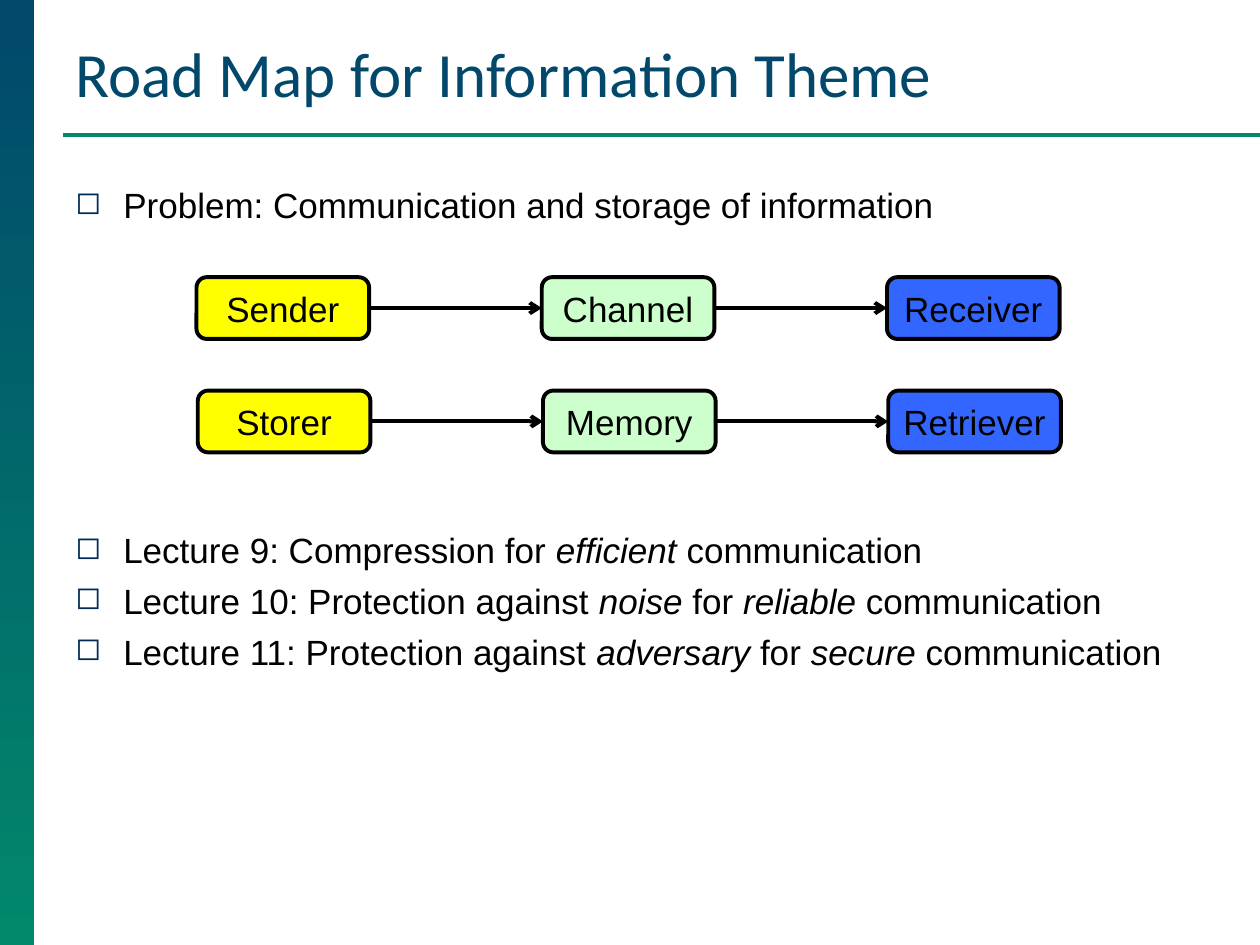
from dataclasses import dataclass

from lxml import etree
from pptx import Presentation
from pptx.dml.color import RGBColor
from pptx.enum.shapes import MSO_CONNECTOR, MSO_SHAPE
from pptx.enum.text import MSO_ANCHOR, PP_ALIGN
from pptx.oxml.ns import qn
from pptx.util import Inches, Pt

STRAIGHT = MSO_CONNECTOR.STRAIGHT
RECTANGLE = MSO_SHAPE.RECTANGLE
ROUNDED = MSO_SHAPE.ROUNDED_RECTANGLE
MIDDLE = MSO_ANCHOR.MIDDLE
BOTTOM = MSO_ANCHOR.BOTTOM
CENTER = PP_ALIGN.CENTER

NAVY, GREEN, BLACK = "01486B", "02886B", "000000"
STAGE_FILLS = ("FFFF00", "CCFFCC", "3366FF")
LEFT_SIDE, RIGHT_SIDE = 1, 3
BOX_WIDTH, BOX_HEIGHT = 1.37, 0.49
BOX_PITCH = 2 * BOX_WIDTH
LINE_WIDTH = 2.25
INDENT = 0.38


@dataclass
class Flow:
    left: float
    top: float
    labels: tuple[str, str, str]


@dataclass
class Bullet:
    runs: tuple[str, ...]
    space_before: float = 5


FLOWS = (
    Flow(1.56, 2.2, ("Sender", "Channel", "Receiver")),
    Flow(1.57, 3.1, ("Storer", "Memory", "Retriever")),
)

# Runs alternate between upright and italic.
BULLETS = (
    Bullet(("Problem: Communication and storage of information",), 0),
    Bullet(("Lecture 9: Compression for ", "efficient", " communication"), 173),
    Bullet(("Lecture 10: Protection against ", "noise", " for ", "reliable", " communication")),
    Bullet(("Lecture 11: Protection against ", "adversary", " for ", "secure", " communication")),
)


def color(value: str) -> RGBColor:
    return RGBColor.from_string(value)


def add_run(paragraph, text: str, size: float = 20, font: str = "Arial",
            fill: str = BLACK, italic: bool = False) -> None:
    run = paragraph.add_run()
    run.text = text
    run.font.size = Pt(size)
    run.font.name = font
    run.font.color.rgb = color(fill)
    run.font.italic = italic


def add_text_frame(slide, left: float, top: float, width: float, height: float):
    box = slide.shapes.add_textbox(Inches(left), Inches(top), Inches(width), Inches(height))
    box.text_frame.word_wrap = True
    return box.text_frame


def add_line(slide, start: tuple[float, float], end: tuple[float, float], fill: str):
    line = slide.shapes.add_connector(STRAIGHT, *map(Inches, start + end))
    line.line.color.rgb = color(fill)
    line.line.width = Pt(LINE_WIDTH)
    etree.SubElement(line._element.spPr, qn("a:effectLst"))
    return line


def add_frame(slide) -> None:
    band = slide.shapes.add_shape(RECTANGLE, 0, 0, Inches(0.27), Inches(7.5))
    band.shadow.inherit = False
    band.line.fill.background()
    band.fill.gradient()
    band.fill.gradient_angle = 270
    for stop, value, position in zip(band.fill.gradient_stops, (NAVY, GREEN), (0, 1)):
        stop.color.rgb = color(value)
        stop.position = position
    add_line(slide, (0.5, 1.07), (10, 1.07), GREEN)


def add_title(slide, text: str) -> None:
    frame = add_text_frame(slide, 0.5, 0.21, 9.28, 0.71)
    frame.vertical_anchor = BOTTOM
    add_run(frame.paragraphs[0], text, 36, "Calibri", NAVY)


def add_bullet_mark(paragraph) -> None:
    properties = paragraph._p.get_or_add_pPr()
    properties.set("marL", str(Inches(INDENT)))
    properties.set("indent", str(-Inches(INDENT)))
    mark_color = etree.SubElement(properties, qn("a:buClr"))
    etree.SubElement(mark_color, qn("a:srgbClr"), val="002A58")
    etree.SubElement(properties, qn("a:buSzPct"), val="90000")
    etree.SubElement(properties, qn("a:buChar"), char="◻")


def add_bullets(slide, bullets: tuple[Bullet, ...]) -> None:
    frame = add_text_frame(slide, 0.5, 1.41, 8.92, 5.51)
    for index, bullet in enumerate(bullets):
        paragraph = frame.add_paragraph() if index else frame.paragraphs[0]
        add_bullet_mark(paragraph)
        paragraph.space_before = Pt(bullet.space_before)
        for position, text in enumerate(bullet.runs):
            add_run(paragraph, text, italic=position % 2 == 1)


def add_stage(slide, left: float, top: float, label: str, fill: str):
    stage = slide.shapes.add_shape(
        ROUNDED, Inches(left), Inches(top), Inches(BOX_WIDTH), Inches(BOX_HEIGHT))
    stage.shadow.inherit = False
    stage.fill.solid()
    stage.fill.fore_color.rgb = color(fill)
    stage.line.color.rgb = color(BLACK)
    stage.line.width = Pt(LINE_WIDTH)
    frame = stage.text_frame
    frame.word_wrap = False
    frame.vertical_anchor = MIDDLE
    frame.paragraphs[0].alignment = CENTER
    add_run(frame.paragraphs[0], label)
    return stage


def add_flow(slide, flow: Flow) -> None:
    stages = [
        add_stage(slide, flow.left + index * BOX_PITCH, flow.top, label, fill)
        for index, (label, fill) in enumerate(zip(flow.labels, STAGE_FILLS))
    ]
    for source, target in zip(stages, stages[1:]):
        arrow = add_line(slide, (0, 0), (1, 0), BLACK)
        arrow.begin_connect(source, RIGHT_SIDE)
        arrow.end_connect(target, LEFT_SIDE)
        etree.SubElement(arrow.line._get_or_add_ln(), qn("a:tailEnd"), type="arrow")


def main() -> None:
    presentation = Presentation()
    presentation.slide_width = Inches(10)
    presentation.slide_height = Inches(7.5)
    slide = presentation.slides.add_slide(presentation.slide_layouts[6])
    add_frame(slide)
    add_title(slide, "Road Map for Information Theme")
    add_bullets(slide, BULLETS)
    for flow in FLOWS:
        add_flow(slide, flow)
    presentation.save("out.pptx")


if __name__ == "__main__":
    main()
